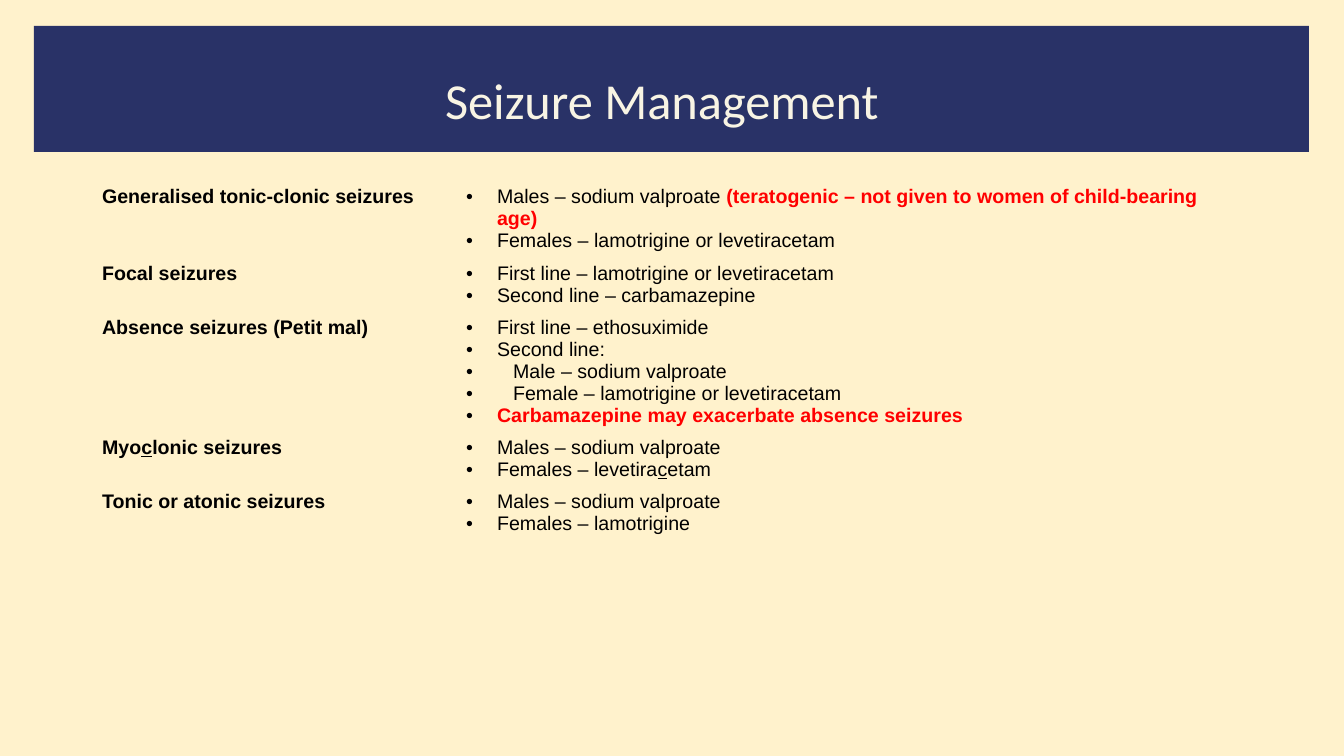
import pptx
import pptx.util
import pptx.dml.color
import pptx.enum.shapes
import pptx.enum.text
import lxml.etree

# Content: a paragraph is a list of (text, style) runs
TITLE = "Seizure Management"
ROWS = [
    ([("Generalised tonic-clonic seizures", "bold")],
     [[("Males – sodium valproate ", "plain"),
       ("(teratogenic – not given to women of child-bearing age)", "warning")],
      [("Females – lamotrigine or levetiracetam", "plain")]]),
    ([("Focal seizures", "bold")],
     [[("First line – lamotrigine or levetiracetam", "plain")],
      [("Second line – carbamazepine", "plain")]]),
    ([("Absence seizures (Petit mal)", "bold")],
     [[("First line – ethosuximide", "plain")],
      [("Second line:", "plain")],
      [("Male – sodium valproate", "sub")],
      [("Female – lamotrigine or levetiracetam", "sub")],
      [("Carbamazepine may exacerbate absence seizures", "warning")]]),
    ([("Myo", "bold"), ("c", "bold underline"), ("lonic seizures", "bold")],
     [[("Males – sodium valproate", "plain")],
      [("Females – levetira", "plain"), ("c", "underline"), ("etam", "plain")]]),
    ([("Tonic or atonic seizures", "bold")],
     [[("Males – sodium valproate", "plain")],
      [("Females – lamotrigine", "plain")]]),
]
COLORS = {"page": "FFF2CC", "band": "293267", "title": "F8F4E4",
          "text": "000000", "warning": "FF0000"}
STYLES = {
    "plain": {},
    "sub": {},
    "bold": {"bold": True},
    "underline": {"underline": True},
    "bold underline": {"bold": True, "underline": True},
    "warning": {"bold": True, "color": "warning"},
}

# Geometry in px
SLIDE = (1344, 756)
BAND = (34, 26, 1275, 126)
TITLE_BOX = (435, 30, 472, 146)
TABLE_LEFT, TABLE_TOP = 92, 181
COLUMNS = (364, 795)
ROW_HEIGHT = 41
HANG, SUB_SHIFT = 31, 16
NO_GRID_STYLE = "{2D5ABB26-0587-4C30-8999-92F81FD0307C}"


def px(n):
    return pptx.util.Emu(round(n * 914400 / 100.8))


def rgb(name):
    return pptx.dml.color.RGBColor.from_string(COLORS[name])


def add_text(p, text, size=14, font="Arial", color="text", bold=False, underline=False):
    r = p.add_run()
    r.text = text
    r.font.size = pptx.util.Pt(size)
    r.font.name = font
    r.font.color.rgb = rgb(color)
    r.font.bold = bold
    r.font.underline = underline


def add_bullet(p, hang):
    pPr = p._p.get_or_add_pPr()
    pPr.set("marL", str(px(hang)))
    pPr.set("indent", str(-px(hang)))
    ns = pptx.oxml.ns.qn
    clr = lxml.etree.SubElement(pPr, ns("a:buClr"))
    lxml.etree.SubElement(clr, ns("a:srgbClr"), val=COLORS["text"])
    lxml.etree.SubElement(pPr, ns("a:buFont"), typeface="Arial")
    lxml.etree.SubElement(pPr, ns("a:buChar"), char="•")


def fill_cell(cell, paragraphs, bulleted):
    cell.fill.background()
    tf = cell.text_frame
    for i, runs in enumerate(paragraphs):
        p = tf.add_paragraph() if i else tf.paragraphs[0]
        if bulleted:
            add_bullet(p, HANG + (SUB_SHIFT if runs[0][1] == "sub" else 0))
        for text, style in runs:
            add_text(p, text, **STYLES[style])


prs = pptx.Presentation()
prs.slide_width, prs.slide_height = map(px, SLIDE)
slide = prs.slides.add_slide(prs.slide_layouts[5])
slide.background.fill.solid()
slide.background.fill.fore_color.rgb = rgb("page")

# Band, placed behind the title
band = slide.shapes.add_shape(pptx.enum.shapes.MSO_SHAPE.RECTANGLE, *map(px, BAND))
band.shadow.inherit = False
band.fill.solid()
band.fill.fore_color.rgb = rgb("band")
band.line.fill.background()
slide.shapes.title._element.addprevious(band._element)

# Title
title = slide.shapes.title
title.left, title.top, title.width, title.height = map(px, TITLE_BOX)
tf = title.text_frame
tf.word_wrap = True
tf.vertical_anchor = pptx.enum.text.MSO_ANCHOR.MIDDLE
p = tf.paragraphs[0]
p.alignment = pptx.enum.text.PP_ALIGN.LEFT
p.line_spacing = 0.9
add_text(p, TITLE, size=36, font="Calibri", color="title")

# Treatment table
table = slide.shapes.add_table(
    len(ROWS), len(COLUMNS), px(TABLE_LEFT), px(TABLE_TOP),
    px(sum(COLUMNS)), px(ROW_HEIGHT * len(ROWS))).table
table.first_row = table.horz_banding = False
table._tbl.tblPr.find(pptx.oxml.ns.qn("a:tableStyleId")).text = NO_GRID_STYLE
for column, width in zip(table.columns, COLUMNS):
    column.width = px(width)
for i, (seizure, treatments) in enumerate(ROWS):
    table.rows[i].height = px(ROW_HEIGHT)
    fill_cell(table.cell(i, 0), [seizure], bulleted=False)
    fill_cell(table.cell(i, 1), treatments, bulleted=True)

prs.save("out.pptx")
